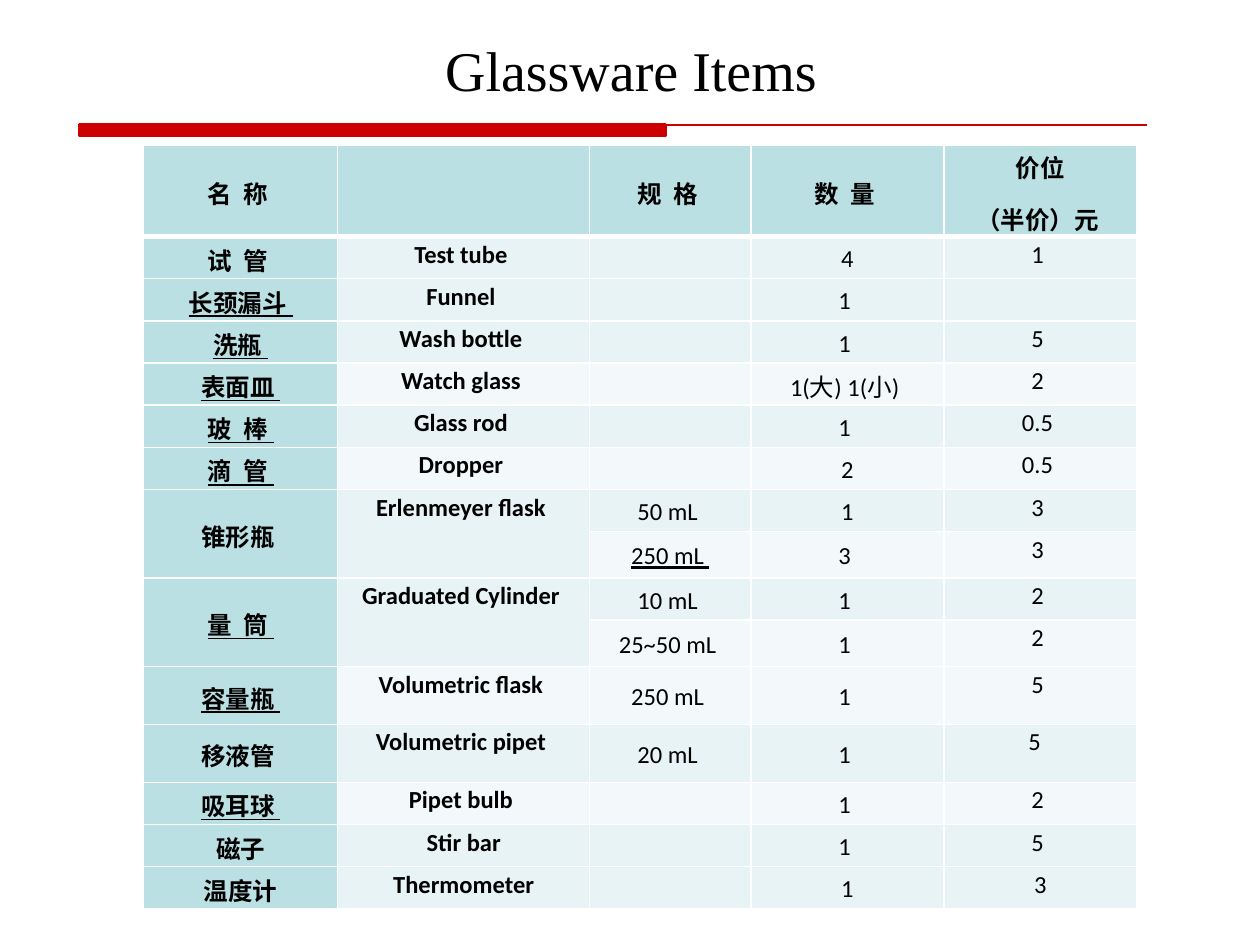
import dataclasses

import lxml.etree
import pptx
import pptx.dml.color
import pptx.enum.shapes
import pptx.enum.text
import pptx.oxml.ns
import pptx.slide
import pptx.table
import pptx.util

Pt = pptx.util.Pt
RGB = pptx.dml.color.RGBColor
Anchor = pptx.enum.text.MSO_ANCHOR
CENTER = pptx.enum.text.PP_ALIGN.CENTER
qn = pptx.oxml.ns.qn


@dataclasses.dataclass(frozen=True)
class Theme:
    text: str = "000000"
    accent: str = "CC0000"
    heading: str = "BBE0E3"
    tint: str = "E7F3F4"
    pale: str = "F3F9FA"
    border: str = "FFFFFF"
    title_font: str = "Times New Roman"
    table_font: str = "Calibri"
    title_size: float = 32
    table_size: float = 14


@dataclasses.dataclass(frozen=True)
class Item:
    name: str  # empty name: a further size of the item above
    english: str
    size: str
    quantity: str
    price: str
    underlined: str = ""  # field that is underlined
    pale: bool = False
    height: float = 24.1


THEME = Theme()
TALL, TALLEST = 26.5, 33.1
HEADER_HEIGHT = 46.8
COLUMN_WIDTHS = (110.9, 144, 92.2, 110.2, 110.2)
HEADINGS = ("名  称 ", "", "规  格 ", "数  量 ", "价位\n（半价）元 ")
FIELDS = ("name", "english", "size", "quantity", "price")
BOLD_FIELDS = ("name", "english")
MIDDLE_FIELDS = ("name", "size", "quantity")
ITEMS = (
    Item("试  管 ", "Test tube ", "", "4", "1 "),
    Item("长颈漏斗 ", "Funnel ", "", "1 ", "", "name"),
    Item("洗瓶 ", "Wash bottle ", "", "1 ", "5 ", "name"),
    Item("表面皿 ", "Watch glass ", "", "1(大) 1(小) ", "2 ", "name", pale=True),
    Item("玻  棒 ", "Glass rod ", "", "1 ", "0.5 ", "name"),
    Item("滴  管 ", "Dropper ", "", "2", "0.5 ", "name", pale=True),
    Item("锥形瓶 ", "Erlenmeyer flask ", "50 mL ", "1", "3 "),
    Item("", "", "250 mL ", "3 ", "3 ", "size", pale=True, height=TALL),
    Item("量  筒 ", "Graduated Cylinder ", "10 mL ", "1 ", "2 ", "name"),
    Item("", "", "25~50 mL ", "1 ", "2 ", pale=True, height=TALL),
    Item("容量瓶 ", "Volumetric flask ", "250 mL ", "1 ", "5 ", "name", pale=True, height=TALLEST),
    Item("移液管 ", "Volumetric pipet ", "20 mL ", "1 ", "5  ", height=TALLEST),
    Item("吸耳球 ", "Pipet bulb ", "", "1 ", "2 ", "name", pale=True),
    Item("磁子", "Stir bar", "", "1 ", "5 "),
    Item("温度计", "Thermometer", "", "1", "3"),
)


def set_borders(cell: pptx.table._Cell, top: float, bottom: float) -> None:
    properties = cell._tc.get_or_add_tcPr()
    sides = (("lnL", 1), ("lnR", 1), ("lnT", top), ("lnB", bottom))
    for position, (side, width) in enumerate(sides):
        line = lxml.etree.Element(qn(f"a:{side}"), w=str(Pt(width)))
        fill = lxml.etree.SubElement(line, qn("a:solidFill"))
        lxml.etree.SubElement(fill, qn("a:srgbClr"), val=THEME.border)
        properties.insert(position, line)


def write_cell(cell: pptx.table._Cell, words: str, fill: str, bold: bool,
               middle: bool, underline: bool = False) -> None:
    cell.fill.solid()
    cell.fill.fore_color.rgb = RGB.from_string(fill)
    cell.margin_left = cell.margin_right = Pt(2.9)
    cell.margin_top, cell.margin_bottom = Pt(0.7), Pt(0)
    cell.vertical_anchor = Anchor.MIDDLE if middle else Anchor.TOP
    cell.text_frame.text = words
    for paragraph in cell.text_frame.paragraphs:
        paragraph.alignment = CENTER
        paragraph.line_spacing = 1.07
        paragraph.space_after = Pt(8)
        font = paragraph.font
        font.name, font.size = THEME.table_font, Pt(THEME.table_size)
        font.bold, font.underline = bold, underline
        font.color.rgb = RGB.from_string(THEME.text)


def add_glassware_table(slide: pptx.slide.Slide) -> None:
    heights = (HEADER_HEIGHT, *(item.height for item in ITEMS))
    table = slide.shapes.add_table(
        len(heights), len(COLUMN_WIDTHS), Pt(82.1), Pt(82.8),
        Pt(sum(COLUMN_WIDTHS)), Pt(sum(heights))).table
    table.first_row = table.horz_banding = False
    for column, width in zip(table.columns, COLUMN_WIDTHS):
        column.width = Pt(width)
    for row, height in zip(table.rows, heights):
        row.height = Pt(height)

    # Header row
    for column, heading in enumerate(HEADINGS):
        cell = table.cell(0, column)
        write_cell(cell, heading, THEME.heading, True, FIELDS[column] != "price")
        set_borders(cell, top=1, bottom=3)

    # One row for each item or size
    for row, item in enumerate(ITEMS, start=1):
        body_fill = THEME.pale if item.pale else THEME.tint
        for column, field in enumerate(FIELDS):
            cell = table.cell(row, column)
            write_cell(cell, getattr(item, field),
                       THEME.heading if field == "name" else body_fill,
                       field in BOLD_FIELDS, field in MIDDLE_FIELDS,
                       field == item.underlined)
            set_borders(cell, top=3 if row == 1 else 1, bottom=1)
        if not item.name:
            for column in range(len(BOLD_FIELDS)):
                table.cell(row - 1, column).merge(table.cell(row, column))


def add_title_rule(slide: pptx.slide.Slide, left: float, top: float) -> None:
    accent = RGB.from_string(THEME.accent)
    rule = slide.shapes.add_connector(
        pptx.enum.shapes.MSO_CONNECTOR.STRAIGHT, Pt(left), Pt(top), Pt(655.2), Pt(top))
    rule.line.color.rgb, rule.line.width = accent, Pt(1.25)
    lxml.etree.SubElement(rule._element.spPr, qn("a:effectLst"))
    bar = slide.shapes.add_shape(
        pptx.enum.shapes.MSO_SHAPE.RECTANGLE, Pt(left), Pt(top), Pt(334.8), Pt(6.5))
    bar.shadow.inherit = False
    bar.fill.solid()
    bar.fill.fore_color.rgb = accent
    bar.line.color.rgb, bar.line.width = accent, Pt(1.5)


def write_title(slide: pptx.slide.Slide, words: str) -> None:
    title = slide.shapes.title
    title.left, title.top, title.width, title.height = Pt(36.7), Pt(15.1), Pt(648), Pt(52.6)
    title.text_frame.text = words
    title.text_frame.vertical_anchor = Anchor.MIDDLE
    paragraph = title.text_frame.paragraphs[0]
    paragraph.alignment = CENTER
    paragraph.line_spacing = 0.95
    paragraph.font.name, paragraph.font.size = THEME.title_font, Pt(THEME.title_size)
    paragraph.font.color.rgb = RGB.from_string(THEME.text)


def main() -> None:
    deck = pptx.Presentation()
    deck.slide_width, deck.slide_height = Pt(720), Pt(540)
    slide = deck.slides.add_slide(deck.slide_layouts.get_by_name("Title Only"))
    write_title(slide, "Glassware Items")
    add_glassware_table(slide)
    add_title_rule(slide, left=45.4, top=71.3)
    deck.save("out.pptx")


if __name__ == "__main__":
    main()
